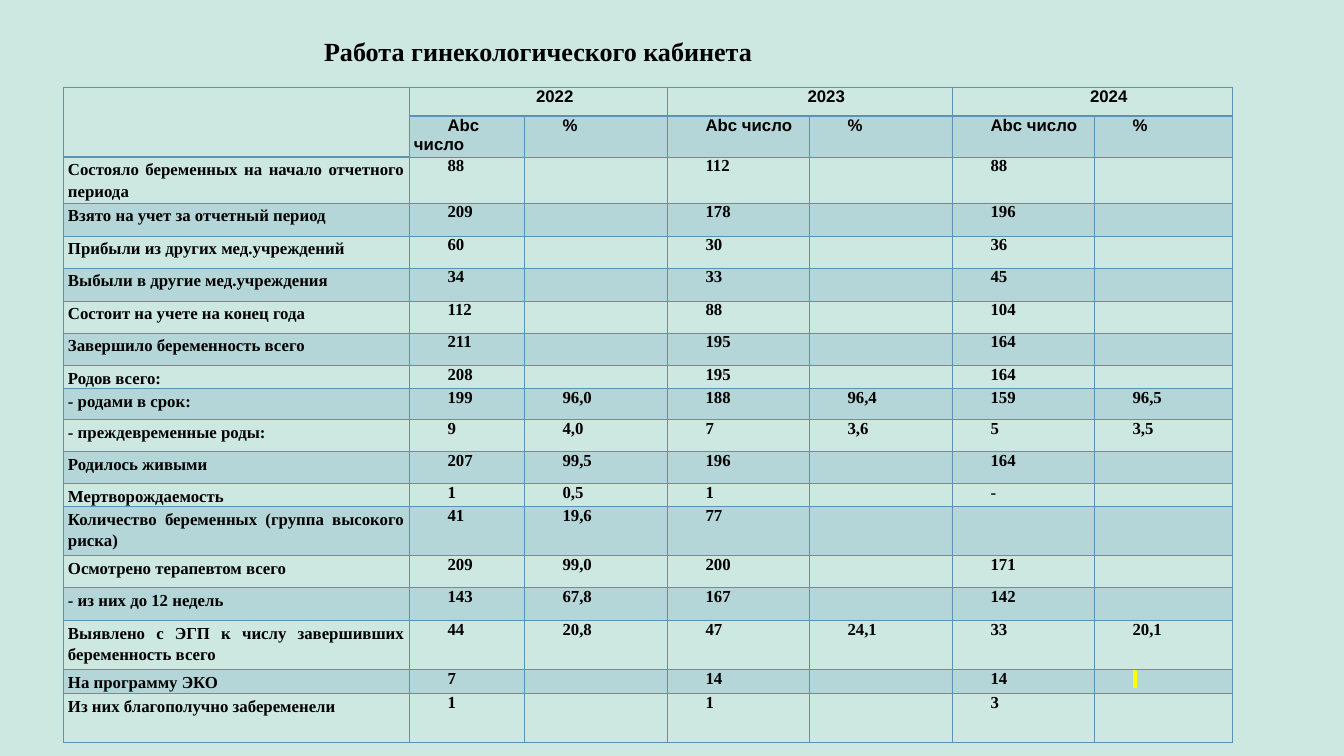
import pptx
import pptx.util
import pptx.dml.color
import pptx.enum.text
import pptx.oxml.ns
from lxml import etree

SCALE = 914400 / 67.2
BLUE = "5C92B5"
ALIGN = pptx.enum.text.PP_ALIGN
ANCHOR = pptx.enum.text.MSO_ANCHOR

YEARS = ["2022", "2023", "2024"]
HEADS = ["Аbc число", "%", "Аbс число", "%", "Аbс число", "%"]
ROWS = [
    (46, "Состояло беременных на начало отчетного периода", "88||112||88|"),
    (33, "Взято на учет за отчетный период", "209||178||196|"),
    (32, "Прибыли из других мед.учреждений", "60||30||36|"),
    (33, "Выбыли в другие мед.учреждения", "34||33||45|"),
    (32, "Состоит на учете на конец года", "112||88||104|"),
    (33, "Завершило беременность всего", "211||195||164|"),
    (23, "Родов всего:", "208||195||164|"),
    (31, "- родами в срок:", "199|96,0|188|96,4|159|96,5"),
    (32, "- преждевременные роды:", "9|4,0|7|3,6|5|3,5"),
    (32, "Родилось живыми", "207|99,5|196||164|"),
    (23, "Мертворождаемость", "1|0,5|1||-|"),
    (49, "Количество беременных (группа высокого риска)", "41|19,6|77|||"),
    (32, "Осмотрено терапевтом всего", "209|99,0|200||171|"),
    (33, "- из них до 12 недель", "143|67,8|167||142|"),
    (49, "Выявлено с ЭГП к числу завершивших беременность всего",
     "44|20,8|47|24,1|33|20,1"),
    (24, "На программу ЭКО", "7||14||14| "),
    (49, "Из них благополучно забеременели", "1||1||3|"),
]
WIDTHS = [346, 115, 143, 142, 143, 142, 138]
HEIGHTS = [29, 41] + [row[0] for row in ROWS]


def px(n):
    return pptx.util.Emu(round(n * SCALE))


def color(code):
    return pptx.dml.color.RGBColor.from_string(code)


def apply(item, form):
    for key, value in form.items():
        setattr(item, key, value)


def add(node, tag, **attrs):
    return etree.SubElement(node, pptx.oxml.ns.qn("a:" + tag), attrs)


class Sheet:
    label = dict(alignment=ALIGN.JUSTIFY, line_spacing=1.15,
                 space_after=pptx.util.Pt(6))
    value = dict(alignment=ALIGN.LEFT)
    year = dict(alignment=ALIGN.CENTER)

    def __init__(self, deck, back):
        self.slide = deck.slides.add_slide(deck.slide_layouts[5])
        fill = self.slide.background.fill
        fill.solid()
        fill.fore_color.rgb = color(back)

    def text(self, para, words, size, face, form):
        apply(para, form)
        run = para.add_run()
        run.text = words
        apply(run.font, dict(size=pptx.util.Pt(size), name=face, bold=True))
        run.font.color.rgb = color("000000")
        return run

    def title(self, words, left, top, width, height):
        shape = self.slide.shapes.title
        apply(shape, dict(left=px(left), top=px(top),
                          width=px(width), height=px(height)))
        frame = shape.text_frame
        apply(frame, dict(margin_left=0, margin_right=0, margin_top=0,
                          margin_bottom=0, word_wrap=True,
                          vertical_anchor=ANCHOR.TOP))
        self.text(frame.paragraphs[0], words, 28, "Times New Roman", self.year)

    def table(self, left, top):
        frame = self.slide.shapes.add_table(
            len(HEIGHTS), len(WIDTHS), px(left), px(top),
            px(sum(WIDTHS)), px(sum(HEIGHTS)))
        table = frame.table
        apply(table, dict(first_row=False, horz_banding=False))
        for col, width in zip(table.columns, WIDTHS):
            col.width = px(width)
        for row, height in zip(table.rows, HEIGHTS):
            row.height = px(height)
        for r in range(len(HEIGHTS)):
            for c in range(len(WIDTHS)):
                self.style(table.cell(r, c), r % 2 and (r, c) != (1, 0),
                           2 if r == 0 or (r, c) == (1, 0) else 1)
        table.cell(0, 0).merge(table.cell(1, 0))
        for n, year in enumerate(YEARS):
            cell = table.cell(0, 2 * n + 1)
            cell.merge(table.cell(0, 2 * n + 2))
            self.entry(cell, year, "Arial", self.year, 457200)
        for c, head in enumerate(HEADS, 1):
            self.entry(table.cell(1, c), head, "Arial", self.value, 457200)
        for r, (_, name, line) in enumerate(ROWS, 2):
            cell = table.cell(r, 0)
            cell.margin_top = px(1)
            self.entry(cell, name, "Times New Roman", self.label, 0)
            for c, word in enumerate(line.split("|"), 1):
                if word:
                    self.entry(table.cell(r, c), word, "Times New Roman",
                               self.value, 457200)

    def style(self, cell, shade, base):
        apply(cell, dict(margin_left=px(5), margin_right=px(5),
                         margin_top=0, margin_bottom=0))
        if shade:
            cell.fill.solid()
            cell.fill.fore_color.rgb = color(BLUE)
        else:
            cell.fill.background()
        props = cell._tc.get_or_add_tcPr()
        if shade:
            add(props[0][0], "alpha", val="20000")
        for n, (side, size) in enumerate(zip("LRTB", (1, 1, 1, base))):
            line = add(props, "ln" + side, w=str(pptx.util.Pt(size)))
            add(add(line, "solidFill"), "srgbClr", val=BLUE)
            props.insert(n, line)

    def entry(self, cell, words, face, form, indent):
        para = cell.text_frame.paragraphs[0]
        run = self.text(para, words, 18, face, form)
        para._p.get_or_add_pPr().set("indent", str(indent))
        if words == " ":
            props = run._r.get_or_add_rPr()
            mark = add(props, "highlight")
            add(mark, "srgbClr", val="FFFF00")
            props.find(pptx.oxml.ns.qn("a:solidFill")).addnext(mark)


def main():
    deck = pptx.Presentation()
    apply(deck, dict(slide_width=px(1344), slide_height=px(756)))
    sheet = Sheet(deck, "CCE8E1")
    sheet.title("Работа гинекологического кабинета", 169, 35, 738, 52)
    sheet.table(63, 87)
    deck.save("out.pptx")


if __name__ == "__main__":
    main()
